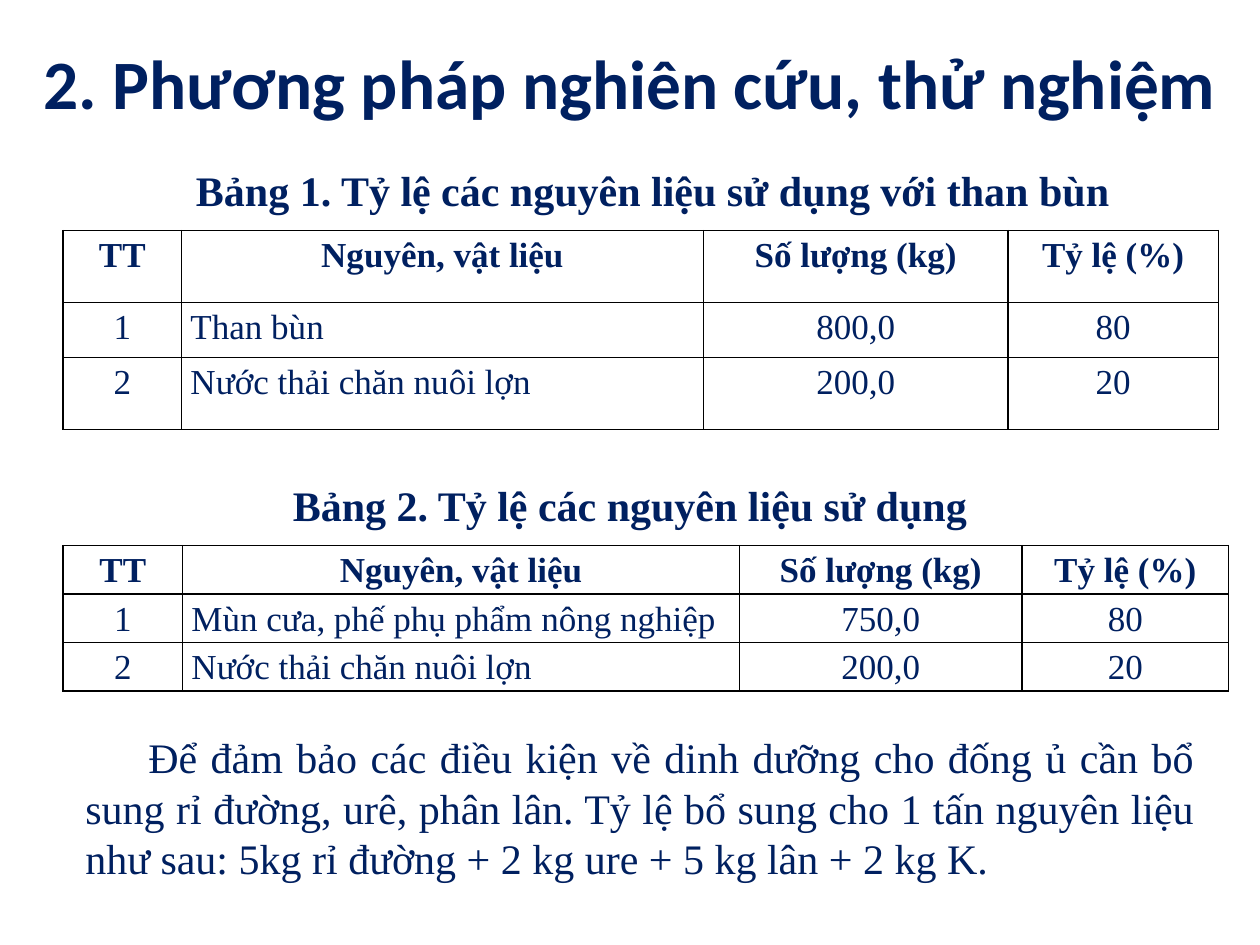
from lxml.etree import SubElement
from pptx import Presentation
from pptx.dml.color import RGBColor
from pptx.enum.text import MSO_ANCHOR, MSO_AUTO_SIZE, PP_ALIGN as Align
from pptx.oxml.ns import qn
from pptx.util import Cm, Pt

COLORS = {"text": "002060", "border": "000000"}
SERIF = "Times New Roman"

TITLE = "2. Phương pháp nghiên cứu, thử nghiệm"
HEADER = ("TT", "Nguyên, vật liệu", "Số lượng (kg)", "Tỷ lệ (%)")
# Boxes are left, top, width, height in cm
TABLES = [
    {
        "caption": "Bảng 1. Tỷ lệ các nguyên liệu sử dụng với than bùn",
        "caption_box": (3.61, 3.18, 19.1, 1.27),
        "wrap": False,
        "top": 4.65,
        "cols": (2.39, 10.52, 6.14, 4.24),
        "rows": (1.45, 1.11, 1.45),
        "body": [
            ("1", "Than bùn", "800,0", "80"),
            ("2", "Nước thải chăn nuôi lợn", "200,0", "20"),
        ],
    },
    {
        "caption": "Bảng 2. Tỷ lệ các nguyên liệu sử dụng",
        "caption_box": (3.81, 9.53, 17.78, 1.27),
        "wrap": True,
        "top": 11,
        "cols": (2.41, 11.23, 5.69, 4.17),
        "rows": (0.97, 0.97, 0.97),
        "body": [
            ("1", "Mùn cưa, phế phụ phẩm nông nghiệp", "750,0", "80"),
            ("2", "Nước thải chăn nuôi lợn", "200,0", "20"),
        ],
    },
]
TABLE_LEFT = 1.27
NOTE = ("Để đảm bảo các điều kiện về dinh dưỡng cho đống ủ cần bổ sung rỉ đường, "
        "urê, phân lân. Tỷ lệ bổ sung cho 1 tấn nguyên liệu như sau: "
        "5kg rỉ đường + 2 kg ure + 5 kg lân + 2 kg K.")
NOTE_BOX = (1.47, 14.61, 22.86, 3.33)


def write(tf, text, size, align, bold=False, font=SERIF):
    p = tf.paragraphs[0]
    p.alignment = align
    r = p.add_run()
    r.text = text
    r.font.size = Pt(size)
    r.font.name = font
    r.font.bold = bold
    r.font.color.rgb = RGBColor.from_string(COLORS["text"])
    return p


def add_text(slide, box, text, align, bold=False, wrap=True):
    tf = slide.shapes.add_textbox(*map(Cm, box)).text_frame
    tf.word_wrap = wrap
    tf.auto_size = MSO_AUTO_SIZE.SHAPE_TO_FIT_TEXT
    tf.vertical_anchor = MSO_ANCHOR.MIDDLE
    return write(tf, text, 24, align, bold)


def add_borders(cell):
    tc_pr = cell._tc.get_or_add_tcPr()
    for side in ("lnL", "lnR", "lnT", "lnB"):
        ln = SubElement(tc_pr, qn(f"a:{side}"), w=str(Pt(1)))
        fill = SubElement(ln, qn("a:solidFill"))
        SubElement(fill, qn("a:srgbClr"), val=COLORS["border"])


def fill_cell(cell, text, align, bold):
    add_borders(cell)
    cell.fill.background()
    cell.margin_left = cell.margin_right = Cm(0.18)
    cell.margin_top = cell.margin_bottom = 0
    p = write(cell.text_frame, text, 20, align, bold)
    p.line_spacing = 1.15
    p.space_before = Pt(3)


def add_material_table(slide, spec):
    cols, heights = spec["cols"], spec["rows"]
    rows = [HEADER, *spec["body"]]
    box = (TABLE_LEFT, spec["top"], sum(cols), sum(heights))
    table = slide.shapes.add_table(len(rows), len(cols), *map(Cm, box)).table
    for column, width in zip(table.columns, cols):
        column.width = Cm(width)
    for i, (values, height) in enumerate(zip(rows, heights)):
        table.rows[i].height = Cm(height)
        for j, value in enumerate(values):
            is_name = i > 0 and j == 1
            align = Align.JUSTIFY if is_name else Align.CENTER
            fill_cell(table.cell(i, j), value, align, bold=i == 0)


def main():
    prs = Presentation()
    prs.slide_width, prs.slide_height = Cm(25.4), Cm(19.05)
    slide = prs.slides.add_slide(prs.slide_layouts[5])

    title = slide.shapes.title
    title.left, title.top, title.width, title.height = map(Cm, (0, 0.76, 25.4, 1.78))
    tf = title.text_frame
    tf.auto_size = MSO_AUTO_SIZE.NONE
    tf.vertical_anchor = MSO_ANCHOR.MIDDLE
    write(tf, TITLE, 39.6, Align.CENTER, True, "Calibri")

    for table in TABLES:
        add_text(slide, table["caption_box"], table["caption"], Align.CENTER, True, table["wrap"])
        add_material_table(slide, table)

    p = add_text(slide, NOTE_BOX, NOTE, Align.JUSTIFY)
    p._p.get_or_add_pPr().set("indent", str(Cm(1.27)))

    prs.save("out.pptx")


if __name__ == "__main__":
    main()
